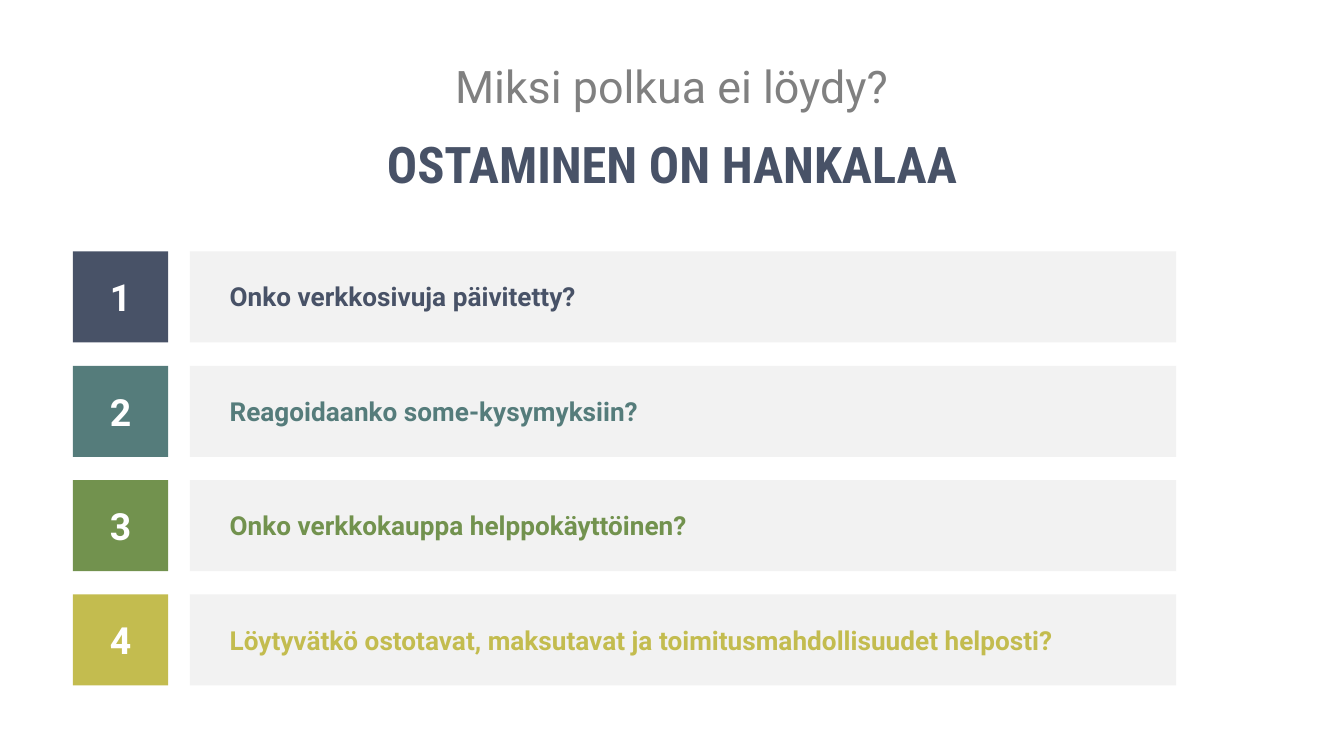
from pptx import Presentation
from pptx.dml.color import RGBColor
from pptx.enum import shapes, text
from pptx.util import Cm, Pt

COLORS = {
    "navy": "485267",
    "teal": "557C7B",
    "green": "72924E",
    "olive": "C3BC4F",
    "grey": "808080",
    "bar": "F2F2F2",
    "white": "FFFFFF",
}


def write(tf, words, size, color, font="Roboto", bold=True, align=text.PP_ALIGN.CENTER):
    p = tf.paragraphs[0]
    p.alignment = align
    r = p.add_run()
    r.text = words
    r.font.name = font
    r.font.size = Pt(size)
    r.font.bold = bold
    r.font.color.rgb = RGBColor.from_string(COLORS[color])


def add_block(s, left, top, width, height, color):
    sp = s.shapes.add_shape(shapes.MSO_SHAPE.RECTANGLE, left, top, width, height)
    sp.shadow.inherit = False
    sp.fill.solid()
    sp.fill.fore_color.rgb = RGBColor.from_string(COLORS[color])
    sp.line.fill.background()
    return sp


prs = Presentation()
prs.slide_width, prs.slide_height = Cm(25.4), Cm(14.28)
s = prs.slides.add_slide(prs.slide_layouts[5])

# Title
sp = s.shapes.title
sp.left, sp.top, sp.width, sp.height = Cm(1.07), Cm(0.94), Cm(23.24), Cm(1.37)
tf = sp.text_frame
tf.margin_left = tf.margin_top = tf.margin_right = tf.margin_bottom = 0
tf.vertical_anchor = text.MSO_ANCHOR.MIDDLE
write(tf, "Miksi polkua ei löydy?", 24, "grey", bold=False)

# Numbered questions: wording, colour, text width in cm
questions = [
    ("Onko verkkosivuja päivitetty?", "navy", 7.14),
    ("Reagoidaanko some-kysymyksiin?", "teal", 8.53),
    ("Onko verkkokauppa helppokäyttöinen?", "green", 9.37),
    ("Löytyvätkö ostotavat, maksutavat ja toimitusmahdollisuudet helposti?", "olive", 16.13),
]
first_top, pitch, height = Cm(4.75), Cm(2.16), Cm(1.72)

for i, (question, color, width) in enumerate(questions):
    top = first_top + i * pitch

    # Grey bar with its question
    add_block(s, Cm(3.59), top, Cm(18.64), height, "bar")
    sp = s.shapes.add_textbox(Cm(4.09), top + Cm(0.43), Cm(width), Cm(0.86))
    tf = sp.text_frame
    tf.word_wrap = False
    tf.auto_size = text.MSO_AUTO_SIZE.SHAPE_TO_FIT_TEXT
    write(tf, question, 14, color, align=text.PP_ALIGN.LEFT)

    # Number box
    sp = add_block(s, Cm(1.38), top, Cm(1.8), height, color)
    sp.text_frame.vertical_anchor = text.MSO_ANCHOR.MIDDLE
    write(sp.text_frame, str(i + 1), 20, "white")

# Subtitle
sp = s.shapes.add_textbox(Cm(1.27), Cm(2.39), Cm(22.86), Cm(1.42))
tf = sp.text_frame
tf.word_wrap = True
tf.auto_size = text.MSO_AUTO_SIZE.SHAPE_TO_FIT_TEXT
write(tf, "OSTAMINEN ON HANKALAA", 27, "navy", font="Roboto Condensed")

prs.save("out.pptx")
